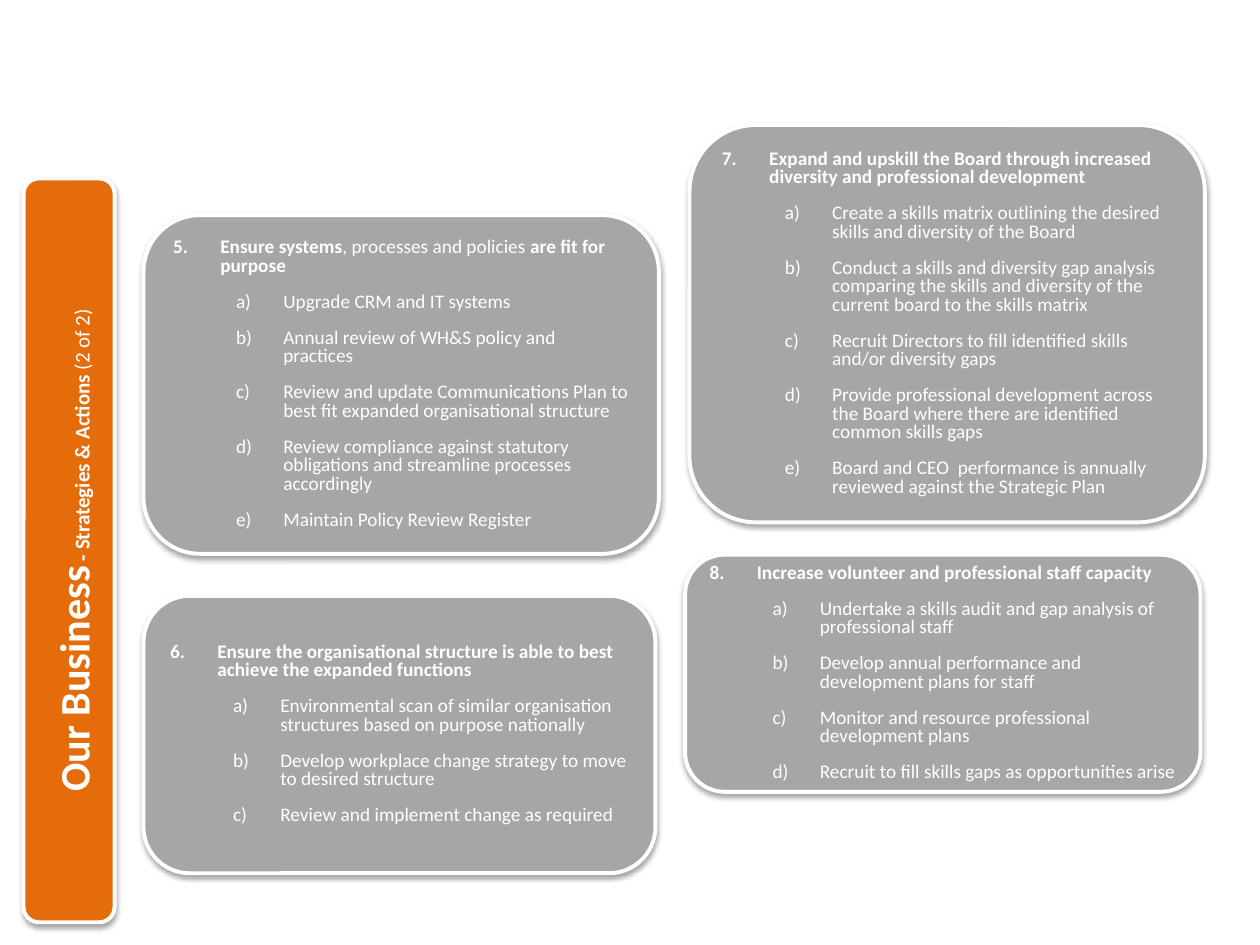
from dataclasses import dataclass

from lxml import etree
from pptx import Presentation
from pptx.dml.color import RGBColor
from pptx.enum.shapes import MSO_SHAPE
from pptx.enum.text import MSO_ANCHOR, MSO_AUTO_SIZE, PP_ALIGN
from pptx.oxml.ns import qn
from pptx.util import Pt

ROUNDED = MSO_SHAPE.ROUNDED_RECTANGLE
MIDDLE = MSO_ANCHOR.MIDDLE
NO_FIT = MSO_AUTO_SIZE.NONE
CENTER = PP_ALIGN.CENTER
LEFT = PP_ALIGN.LEFT

WHITE = RGBColor(0xFF, 0xFF, 0xFF)
ORANGE = RGBColor(0xE4, 0x6C, 0x0A)
GREY = RGBColor(0xA6, 0xA6, 0xA6)

FONT = "Calibri"
BODY_SIZE = 11
HANGING = 27
ACTION_INDENT = 63
TEXT_INSET = 7.2
CORNER_INSET = 0.05
COMPARISON_LAYOUT = 4


@dataclass(frozen=True)
class Frame:
    left: float
    top: float
    width: float
    height: float


@dataclass(frozen=True)
class Span:
    text: str
    bold: bool = False
    size: float = BODY_SIZE


@dataclass(frozen=True)
class Strategy:
    number: int
    frame: Frame
    heading: tuple[Span, ...]
    actions: tuple[str, ...]


SIDEBAR = Frame(13.5, 102, 52, 425)
TITLE = (
    Span("Our Business", True, 24),
    Span(" - Strategies & Actions ", True, 12),
    Span("(2 of 2)", False, 12),
)
STRATEGIES = (
    Strategy(
        5,
        Frame(82, 123, 294.5, 193.5),
        (
            Span("Ensure systems", True),
            Span(", processes and policies"),
            Span(" are fit for purpose", True),
        ),
        (
            "Upgrade CRM and IT systems",
            "Annual review of WH&S policy and practices",
            "Review and update Communications Plan to best fit expanded organisational structure",
            "Review compliance against statutory obligations and streamline processes accordingly",
            "Maintain Policy Review Register",
        ),
    ),
    Strategy(
        6,
        Frame(82, 340.5, 292.5, 158.5),
        (Span("Ensure the organisational structure is able to best achieve the expanded functions", True),),
        (
            "Environmental scan of similar organisation structures based on purpose nationally",
            "Develop workplace change strategy to move to desired structure",
            "Review and implement change as required",
        ),
    ),
    Strategy(
        7,
        Frame(394, 71.5, 294.5, 227),
        (Span("Expand and upskill the Board through increased diversity and professional development", True),),
        (
            "Create a skills matrix outlining the desired skills and diversity of the Board",
            "Conduct a skills and diversity gap analysis comparing the skills and diversity "
            "of the current board to the skills matrix",
            "Recruit Directors to fill identified skills and/or diversity gaps",
            "Provide professional development across the Board where there are identified common skills gaps",
            "Board and CEO  performance is annually reviewed against the Strategic Plan",
        ),
    ),
    Strategy(
        8,
        Frame(391.5, 317, 294.5, 135.5),
        (Span("Increase volunteer and professional staff capacity", True),),
        (
            "Undertake a skills audit and gap analysis of professional staff",
            "Develop annual performance and development plans for staff",
            "Monitor and resource professional development plans",
            "Recruit to fill skills gaps as opportunities arise",
        ),
    ),
)


def draw_panel(page, frame: Frame, color: RGBColor) -> None:
    panel = page.shapes.add_shape(
        ROUNDED, Pt(frame.left), Pt(frame.top), Pt(frame.width), Pt(frame.height)
    )
    panel.fill.solid()
    panel.fill.fore_color.rgb = color
    panel.line.color.rgb = WHITE
    panel.line.width = Pt(2.25)
    panel.shadow.inherit = False
    effects = panel._element.spPr.find(qn("a:effectLst"))
    shadow = etree.SubElement(
        effects, qn("a:outerShdw"), blurRad=str(Pt(3.1)), dist=str(Pt(1.8)),
        dir="5400000", rotWithShape="0",
    )
    shade = etree.SubElement(shadow, qn("a:srgbClr"), val="000000")
    etree.SubElement(shade, qn("a:alpha"), val="35000")


def place_text(page, holder, frame: Frame, inset: float):
    page.shapes._spTree.append(holder._element)
    holder.left, holder.top = Pt(frame.left), Pt(frame.top)
    holder.width, holder.height = Pt(frame.width), Pt(frame.height)
    box = holder.text_frame
    box.word_wrap = True
    box.auto_size = NO_FIT
    box.vertical_anchor = MIDDLE
    box.margin_left = box.margin_right = Pt(inset)
    box.margin_top = box.margin_bottom = Pt(0)
    return box


def write_spans(para, spans: tuple[Span, ...], line_spacing: float) -> None:
    para.line_spacing = line_spacing
    para.space_before = Pt(0)
    para.space_after = Pt(10)
    for span in spans:
        run = para.add_run()
        run.text = span.text
        run.font.name = FONT
        run.font.size = Pt(span.size)
        run.font.bold = span.bold
        run.font.color.rgb = WHITE


def number_paragraph(para, indent: float, style: str, start: int = 1) -> None:
    properties = para._p.get_or_add_pPr()
    properties.set("marL", str(Pt(indent)))
    properties.set("indent", str(Pt(-HANGING)))
    etree.SubElement(properties, qn("a:buFont"), typeface="+mj-lt")
    etree.SubElement(properties, qn("a:buAutoNum"), type=style, startAt=str(start))


def draw_title(page) -> None:
    draw_panel(page, SIDEBAR, ORANGE)
    unrotated = Frame(
        SIDEBAR.left + (SIDEBAR.width - SIDEBAR.height) / 2,
        SIDEBAR.top + (SIDEBAR.height - SIDEBAR.width) / 2,
        SIDEBAR.height,
        SIDEBAR.width,
    )
    holder = page.shapes.title
    box = place_text(page, holder, unrotated, TEXT_INSET)
    holder.rotation = 270
    para = box.paragraphs[0]
    para.alignment = CENTER
    write_spans(para, TITLE, 1.15)


def draw_strategy(page, holder, strategy: Strategy) -> None:
    frame = strategy.frame
    draw_panel(page, frame, GREY)
    inset = TEXT_INSET + CORNER_INSET * min(frame.width, frame.height)
    box = place_text(page, holder, frame, inset)
    heading = box.paragraphs[0]
    heading.alignment = LEFT
    number_paragraph(heading, HANGING, "arabicPeriod", strategy.number)
    write_spans(heading, strategy.heading, 0.8)
    for action in strategy.actions:
        para = box.add_paragraph()
        para.level = 1
        para.alignment = LEFT
        number_paragraph(para, ACTION_INDENT, "alphaLcParenR")
        write_spans(para, (Span(action),), 0.8)


def main() -> None:
    deck = Presentation()
    deck.slide_width, deck.slide_height = Pt(720), Pt(540)
    page = deck.slides.add_slide(deck.slide_layouts[COMPARISON_LAYOUT])
    bodies = [holder for holder in page.placeholders if holder.placeholder_format.idx > 0]
    draw_title(page)
    for holder, strategy in zip(bodies, STRATEGIES):
        draw_strategy(page, holder, strategy)
    deck.save("out.pptx")


if __name__ == "__main__":
    main()
